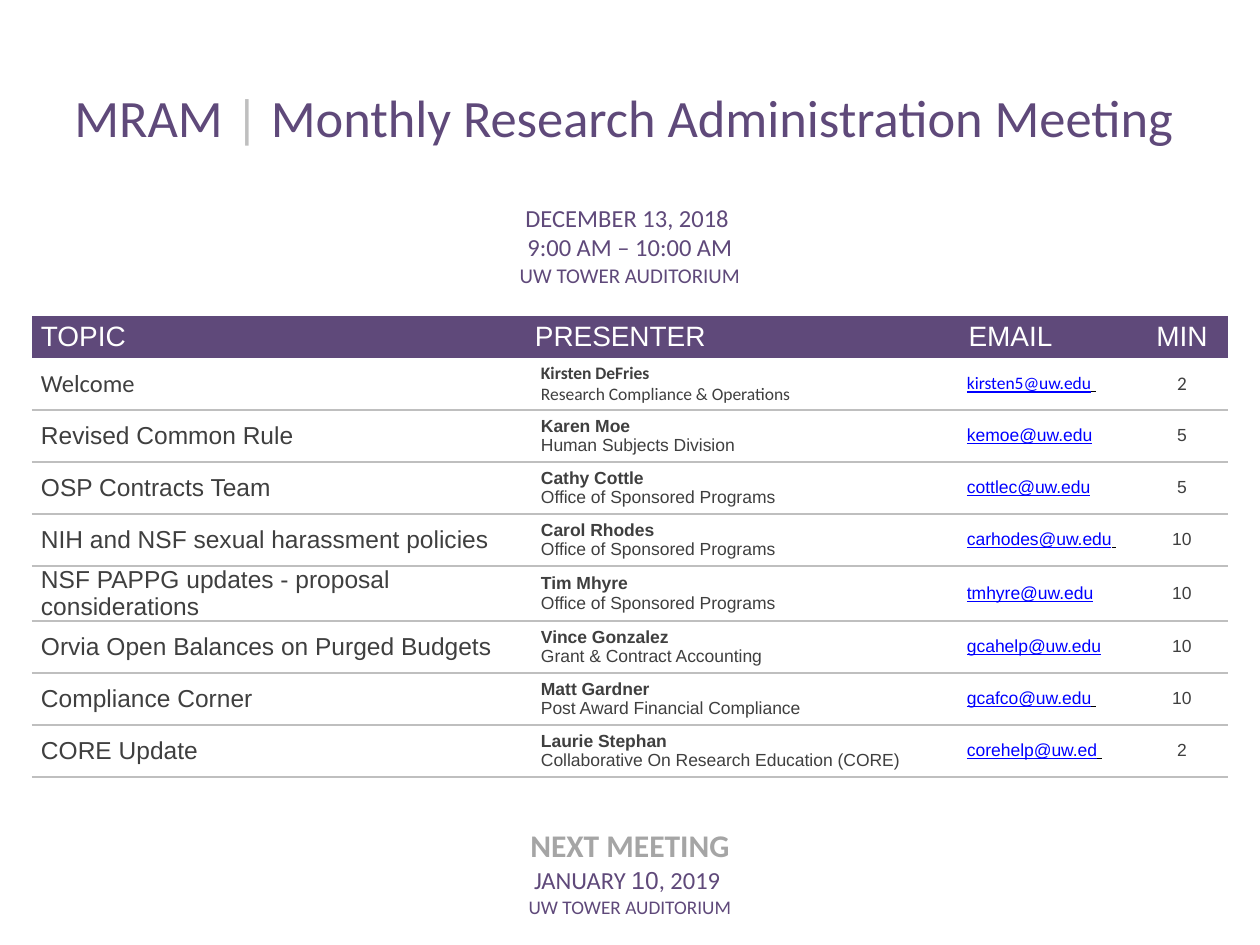
from dataclasses import dataclass

from lxml import etree
from pptx import Presentation
from pptx.dml.color import RGBColor
from pptx.enum.text import MSO_ANCHOR, PP_ALIGN
from pptx.oxml.ns import qn
from pptx.util import Emu, Pt

PX = 914400 // 126
LEFT, CENTER = PP_ALIGN.LEFT, PP_ALIGN.CENTER
MIDDLE, BOTTOM = MSO_ANCHOR.MIDDLE, MSO_ANCHOR.BOTTOM

PURPLE = RGBColor(0x5F, 0x49, 0x7A)
WHITE = RGBColor(0xFF, 0xFF, 0xFF)
RULE_GRAY = RGBColor(0xBF, 0xBF, 0xBF)
HEADING_GRAY = RGBColor(0xA5, 0xA5, 0xA5)
TEXT_GRAY = RGBColor(0x3F, 0x3F, 0x3F)
LINK_BLUE = RGBColor(0x00, 0x00, 0xFF)
BLACK = RGBColor(0, 0, 0)
SANS, HUMANIST = "Arial", "Calibri"

# Table grid, in px
TABLE_LEFT, TABLE_TOP = 32, 74
COLUMN_WIDTHS = [494, 426, 184, 92]
TITLE_HEIGHT, DATE_HEIGHT, HEADER_HEIGHT = 78, 164, 42
TOPIC_HEIGHT, NEXT_HEIGHT = 52, 143
MARGIN, WIDE_MARGIN = 9, 15


@dataclass
class Run:
    text: str
    size: int
    color: RGBColor = TEXT_GRAY
    font: str = SANS
    bold: bool = False
    underline: bool = False


@dataclass
class Topic:
    title: str
    presenter: str
    office: str
    email: str
    minutes: int
    font: str = SANS
    minutes_size: int = 10
    email_end: str = ""


TOPICS = [
    Topic("Welcome", "Kirsten DeFries", "Research Compliance & Operations",
          "kirsten5@uw.edu", 2, HUMANIST, 11, " "),
    Topic("Revised Common Rule", "Karen Moe", "Human Subjects Division",
          "kemoe@uw.edu", 5),
    Topic("OSP Contracts Team", "Cathy Cottle", "Office of Sponsored Programs",
          "cottlec@uw.edu", 5),
    Topic("NIH and NSF sexual harassment policies", "Carol Rhodes",
          "Office of Sponsored Programs", "carhodes@uw.edu", 10, email_end=" "),
    Topic("NSF PAPPG updates - proposal considerations", "Tim Mhyre",
          "Office of Sponsored Programs", "tmhyre@uw.edu", 10),
    Topic("Orvia Open Balances on Purged Budgets", "Vince Gonzalez",
          "Grant & Contract Accounting", "gcahelp@uw.edu", 10),
    Topic("Compliance Corner", "Matt Gardner", "Post Award Financial Compliance",
          "gcafco@uw.edu", 10, email_end=" "),
    Topic("CORE Update", "Laurie Stephan",
          "Collaborative On Research Education (CORE)",
          "corehelp@uw.ed", 2, email_end=" "),
]


def px(length: int) -> Emu:
    return Emu(length * PX)


def set_borders(cell, ruled: str) -> None:
    """Rule the named sides (T, B) in gray and clear the others."""
    properties = cell._tc.get_or_add_tcPr()
    for side in "LRTB":
        line = etree.SubElement(properties, qn(f"a:ln{side}"), w=str(Pt(1)))
        if side in ruled:
            fill = etree.SubElement(line, qn("a:solidFill"))
            etree.SubElement(fill, qn("a:srgbClr"), val=str(RULE_GRAY))
        else:
            etree.SubElement(line, qn("a:noFill"))


def fill_cell(cell, lines: list[list[Run]], align=LEFT, anchor=MIDDLE,
              fill=WHITE, ruled="", left=MARGIN, right=MARGIN, bottom=0) -> None:
    set_borders(cell, ruled)
    cell.fill.solid()
    cell.fill.fore_color.rgb = fill
    layout = {"vertical_anchor": anchor, "margin_left": px(left),
              "margin_right": px(right), "margin_top": 0,
              "margin_bottom": px(bottom)}
    for name, value in layout.items():
        setattr(cell, name, value)
    frame = cell.text_frame
    for index, runs in enumerate(lines):
        paragraph = frame.add_paragraph() if index else frame.paragraphs[0]
        paragraph.alignment = align
        for item in runs:
            run = paragraph.add_run()
            run.text = item.text
            run.font.color.rgb = item.color
            formats = {"name": item.font, "size": Pt(item.size),
                       "bold": item.bold, "underline": item.underline}
            for name, value in formats.items():
                setattr(run.font, name, value)


def fill_banner(table, row: int, lines: list[list[Run]], **options) -> None:
    """Fill a row merged across all columns."""
    cell = table.cell(row, 0)
    cell.merge(table.cell(row, len(COLUMN_WIDTHS) - 1))
    fill_cell(cell, lines, align=CENTER, anchor=BOTTOM, **options)


def fill_topic(table, row: int, topic: Topic) -> None:
    font = topic.font
    ruled = "B" if row == 3 else "TB"
    email = [Run(topic.email, 10, LINK_BLUE, font, underline=True)]
    if topic.email_end:
        email.append(Run(topic.email_end, 10, BLACK, underline=True))
    fill_cell(table.cell(row, 0), [[Run(topic.title, 14, font=font)]], ruled=ruled)
    fill_cell(table.cell(row, 1),
              [[Run(topic.presenter, 10, font=font, bold=True)],
               [Run(topic.office, 10, font=font)]],
              ruled=ruled, left=WIDE_MARGIN, right=WIDE_MARGIN)
    fill_cell(table.cell(row, 2), [email], ruled=ruled,
              left=WIDE_MARGIN, right=WIDE_MARGIN)
    fill_cell(table.cell(row, 3),
              [[Run(str(topic.minutes), topic.minutes_size, font=font)]],
              align=CENTER, ruled=ruled)


def main() -> None:
    presentation = Presentation()
    presentation.slide_width, presentation.slide_height = px(1260), px(945)
    slide = presentation.slides.add_slide(presentation.slide_layouts[6])

    # Agenda table
    heights = [TITLE_HEIGHT, DATE_HEIGHT, HEADER_HEIGHT,
               *[TOPIC_HEIGHT] * len(TOPICS), NEXT_HEIGHT]
    table = slide.shapes.add_table(
        len(heights), len(COLUMN_WIDTHS), px(TABLE_LEFT), px(TABLE_TOP),
        px(sum(COLUMN_WIDTHS)), px(sum(heights))).table
    table.first_row = table.horz_banding = False
    for column, width in zip(table.columns, COLUMN_WIDTHS):
        column.width = px(width)
    for row, height in zip(table.rows, heights):
        row.height = px(height)

    # Title and date
    fill_banner(table, 0, [[
        Run("MRAM ", 30, PURPLE, HUMANIST), Run("|", 30, RULE_GRAY, HUMANIST),
        Run(" Monthly Research Administration Meeting ", 30, PURPLE, HUMANIST)]])
    fill_banner(table, 1, [
        [Run("DECEMBER 13, 2018 ", 14, PURPLE, HUMANIST)],
        [Run("9:00 AM – 10:00 AM", 14, PURPLE, HUMANIST)],
        [Run("UW TOWER AUDITORIUM", 12, PURPLE, HUMANIST)]], bottom=27)

    # Column headings
    for index, heading in enumerate(["TOPIC", "PRESENTER", " EMAIL", "MIN"]):
        fill_cell(table.cell(2, index), [[Run(heading, 16, WHITE)]], fill=PURPLE,
                  align=CENTER if heading == "MIN" else LEFT)

    # Topics
    for row, topic in enumerate(TOPICS, start=3):
        fill_topic(table, row, topic)

    # Next meeting
    fill_banner(table, len(heights) - 1, [
        [Run("NEXT MEETING", 18, HEADING_GRAY, HUMANIST, bold=True)],
        [Run("JANUARY ", 14, PURPLE, HUMANIST), Run("10", 14, PURPLE),
         Run(", 2019 ", 14, PURPLE, HUMANIST)],
        [Run("UW TOWER AUDITORIUM", 11, PURPLE, HUMANIST)]], ruled="T")

    presentation.save("out.pptx")


if __name__ == "__main__":
    main()
